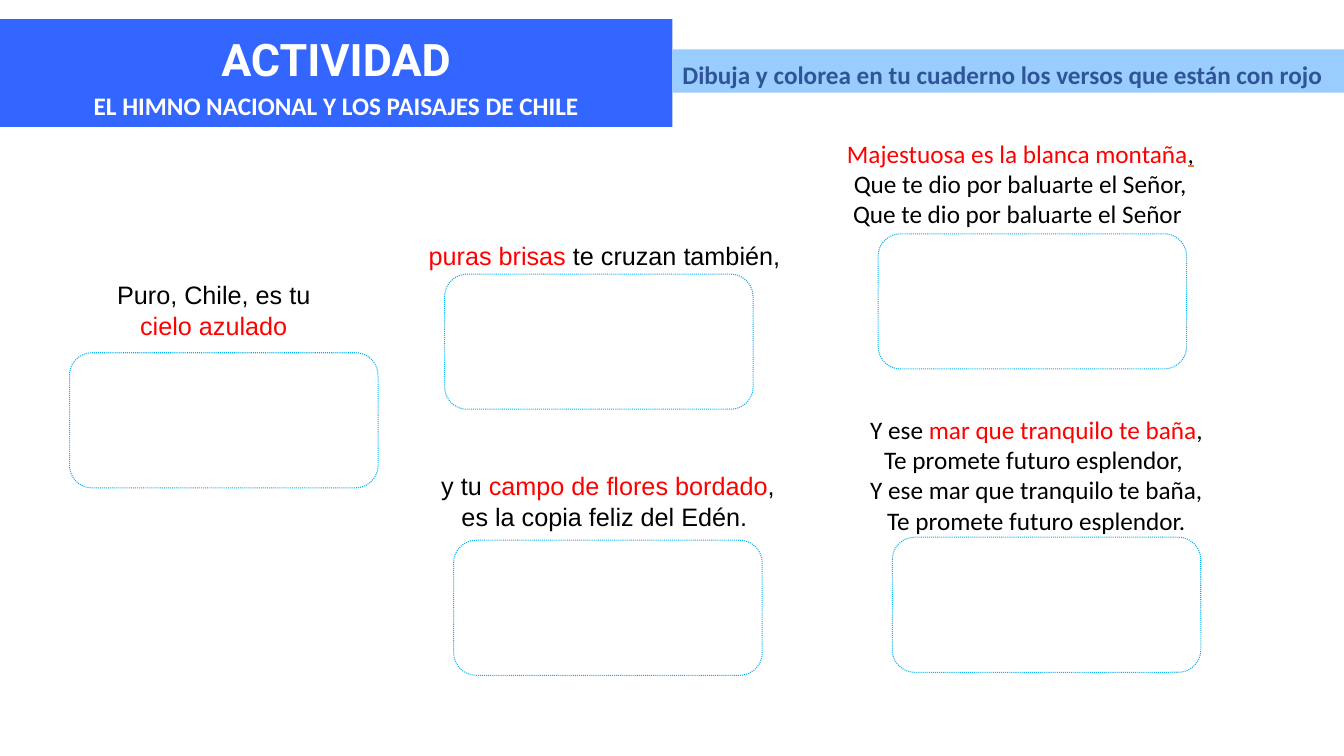
from lxml import etree
from pptx import Presentation
from pptx import util as u
from pptx.dml import color
from pptx.enum import dml, shapes, text
from pptx.oxml import ns

theme = {
    "blue": color.RGBColor.from_string("3366FF"),
    "sky": color.RGBColor.from_string("99CCFF"),
    "navy": color.RGBColor.from_string("2F5597"),
    "outline": color.RGBColor.from_string("00B0F0"),
    "white": color.RGBColor.from_string("FFFFFF"),
    "black": color.RGBColor.from_string("000000"),
    "red": color.RGBColor.from_string("FF0000"),
    "underline": "ED7D31",
    "title": u.Pt(32),
    "body": u.Pt(18),
}


def apply(target, values):
    for name, value in values.items():
        setattr(target, name, value)


def write(box, lines, frame_format, para_format, font_format):
    frame = box.text_frame
    apply(frame, {"auto_size": text.MSO_AUTO_SIZE.SHAPE_TO_FIT_TEXT, **frame_format})
    for index, line in enumerate(lines):
        para = frame.add_paragraph() if index else frame.paragraphs[0]
        apply(para, para_format)
        for words, tint, *extra in line:
            span = para.add_run()
            span.text = words
            apply(span.font, {**font_format, **(extra[0] if extra else {})})
            span.font.color.rgb = theme[tint]


deck = Presentation()
apply(deck, {"slide_width": u.Inches(13.33), "slide_height": u.Inches(7.5)})
page = deck.slides.add_slide(deck.slide_layouts[6])

center = text.PP_ALIGN.CENTER
top = text.MSO_ANCHOR.TOP
middle = text.MSO_ANCHOR.MIDDLE
heading = [
    [("ACTIVIDAD", "white", {"size": theme["title"], "name": "Roboto"})],
    [("EL HIMNO NACIONAL Y LOS PAISAJES DE CHILE", "white")],
]
instruction = [[("Dibuja y colorea en tu cuaderno los versos que están con rojo", "navy")]]
bands = [
    (0, 0.19, 1.07, "blue", heading, {"alignment": center}),
    (6.67, 0.49, 0.43, "sky", instruction,
     {"alignment": text.PP_ALIGN.LEFT, "space_after": u.Pt(10)}),
]
for left, y, height, fill, lines, para_format in bands:
    band = page.shapes.add_shape(
        shapes.MSO_SHAPE.RECTANGLE, u.Inches(left), u.Inches(y), u.Inches(6.67), u.Inches(height))
    band.shadow.inherit = False
    band.fill.solid()
    band.fill.fore_color.rgb = theme[fill]
    band.line.fill.background()
    write(band, lines, {"word_wrap": True, "vertical_anchor": top},
          {"line_spacing": 1.15, **para_format},
          {"size": theme["body"], "name": "Calibri", "bold": True})

verses = [
    (0.87, 2.72, 2.5, 0.71, "Arial", True, middle, [
        [("Puro, Chile, es tu ", "black"), ("cielo azulado", "red")]]),
    (3.86, 2.33, 4.34, 0.4, "Arial", True, middle, [
        [("puras brisas ", "red"), ("te cruzan también, ", "black")]]),
    (4.26, 4.62, 3.54, 0.71, "Arial", False, top, [
        [("y tu ", "black"), ("campo de flores bordado", "red"), (",", "black")],
        [("es la copia feliz del Edén. ", "black")]]),
    (8.21, 1.32, 3.82, 1.01, "Calibri", False, top, [
        [("Majestuosa es la blanca montaña", "red"), (",", "black", {"underline": True})],
        [("Que te dio por baluarte el Señor,", "black")],
        [("Que te dio por baluarte el Señor ", "black")]]),
    (8.51, 4.06, 3.54, 1.31, "Calibri", False, top, [
        [("Y ese ", "black"), ("mar que tranquilo te baña", "red"), (",", "black")],
        [("Te promete futuro esplendor, ", "black")],
        [("Y ese mar que tranquilo te baña,", "black")],
        [("Te promete futuro esplendor.", "black")]]),
]
for left, y, width, height, typeface, wrap, anchor, lines in verses:
    box = page.shapes.add_textbox(
        u.Inches(left), u.Inches(y), u.Inches(width), u.Inches(height))
    write(box, lines, {"word_wrap": wrap, "vertical_anchor": anchor},
          {"alignment": center}, {"size": theme["body"], "name": typeface})
    for para in box.text_frame.paragraphs:
        for span in para.runs:
            if span.font.underline:
                solid = span.font._element.find(ns.qn("a:solidFill"))
                underline = etree.Element(ns.qn("a:uFill"))
                paint = etree.SubElement(underline, ns.qn("a:solidFill"))
                etree.SubElement(paint, ns.qn("a:srgbClr"), val=theme["underline"])
                solid.addnext(underline)

drawing_spots = [(0.69, 3.5), (4.41, 2.72), (4.5, 5.36), (8.71, 2.32), (8.85, 5.33)]
for left, y in drawing_spots:
    drawing = page.shapes.add_shape(
        shapes.MSO_SHAPE.ROUNDED_RECTANGLE,
        u.Inches(left), u.Inches(y), u.Inches(3.06), u.Inches(1.34))
    drawing.shadow.inherit = False
    drawing.fill.background()
    drawing.line.color.rgb = theme["outline"]
    apply(drawing.line, {"width": u.Pt(0.75), "dash_style": dml.MSO_LINE.ROUND_DOT})

deck.save("out.pptx")
